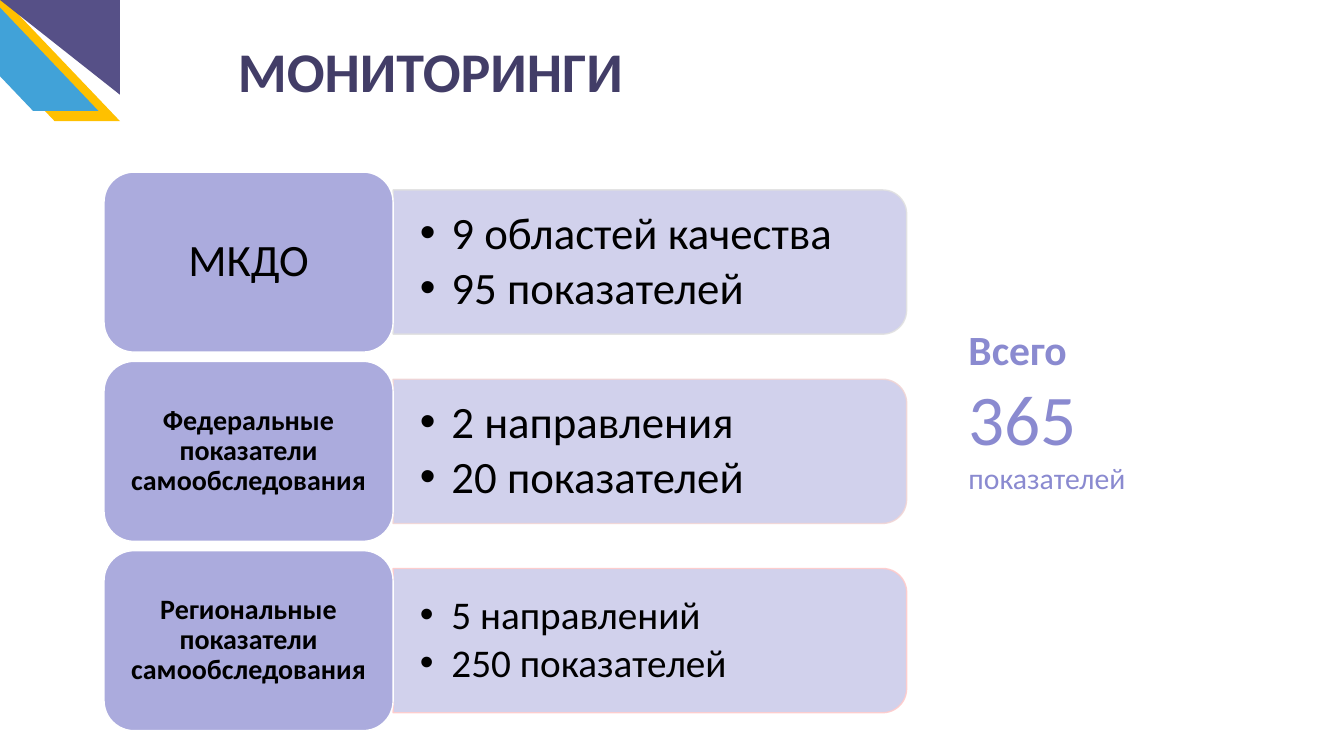
"""Build the monitoring summary slide."""
from lxml import etree
from pptx import Presentation
from pptx.dml.color import RGBColor
from pptx.enum import shapes, text
from pptx.oxml import ns
from pptx.util import Pt

YELLOW = RGBColor(0xFF, 0xC0, 0x00)
BLUE = RGBColor(0x41, 0xA2, 0xD8)
VIOLET = RGBColor(0x56, 0x50, 0x87)
TITLE = RGBColor(0x42, 0x3D, 0x67)
LABEL = RGBColor(0xAB, 0xAB, 0xDD)
PANEL = RGBColor(0xCD, 0xCD, 0xEB)
TOTAL = RGBColor(0x8A, 0x8A, 0xD0)
WHITE = RGBColor(0xFF, 0xFF, 0xFF)
BLACK = RGBColor(0x00, 0x00, 0x00)
MSO = shapes.MSO_SHAPE


def add_shape(kind, x, y, w, h, fill, line=None):
    sp = s.shapes.add_shape(kind, Pt(x), Pt(y), Pt(w), Pt(h))
    sp.shadow.inherit = False
    sp.fill.solid()
    sp.fill.fore_color.rgb = fill
    if line is None:
        sp.line.fill.background()
    else:
        sp.line.color.rgb = line
        sp.line.width = Pt(1)
    return sp


def add_run(p, words, size, color, bold=False):
    r = p.add_run()
    r.text = words
    r.font.name = "Calibri"
    r.font.size = Pt(size)
    r.font.bold = bold
    r.font.color.rgb = color


prs = Presentation()
prs.slide_width, prs.slide_height = Pt(960), Pt(540)
s = prs.slides.add_slide(prs.slide_layouts[6])

for x, y, color in [(-46, -2.7, YELLOW), (-61.4, -10, BLUE)]:
    sp = add_shape(MSO.PARALLELOGRAM, x, y, 131.8, 89.3, color)
    sp.adjustments[0] = 0.953
    sp.element.spPr.xfrm.set("flipH", "1")
sp = add_shape(MSO.RIGHT_TRIANGLE, 0, 0, 85.7, 67.7, VIOLET)
sp.element.spPr.xfrm.set("flipH", "1")
sp.element.spPr.xfrm.set("flipV", "1")

tf = s.shapes.add_textbox(Pt(170), Pt(22.3), Pt(573), Pt(55.4)).text_frame
tf.word_wrap = True
tf.margin_left = 0
add_run(tf.paragraphs[0], "МОНИТОРИНГИ", 40, TITLE, True)

rows = [
    ("МКДО", 32, False, 9.4, ["9 областей качества", "95 показателей"], 32,
     RGBColor(0xE1, 0xE1, 0xE1)),
    ("Федеральные показатели самообследования", 20, True, 5.8,
     ["2 направления", "20 показателей"], 32, RGBColor(0xF1, 0xD5, 0xD5)),
    ("Региональные показатели самообследования", 20, True, 5.8,
     ["5 направлений", "250 показателей"], 28, RGBColor(0xFF, 0xCB, 0xCB)),
]
left, top, label_w, label_h, pitch = 74.3, 122.9, 206.5, 128.6, 135.2
panel_w, panel_h = 366.8, 103
panel_x = left + label_w
for i, (label, label_size, bold, inset, items, item_size, edge) in enumerate(rows):
    y = top + i * pitch
    mid = y + label_h / 2

    sp = add_shape(MSO.ROUND_2_SAME_RECTANGLE, panel_x + (panel_w - panel_h) / 2,
                   mid - panel_w / 2, panel_h, panel_w, PANEL, edge)
    sp.rotation = 90
    for color in sp.element.spPr.iter(ns.qn("a:srgbClr")):
        etree.SubElement(color, ns.qn("a:alpha"), val="90000")

    tf = s.shapes.add_textbox(Pt(panel_x), Pt(mid - 46.5), Pt(362), Pt(93)).text_frame
    tf.word_wrap = True
    tf.vertical_anchor = text.MSO_ANCHOR.MIDDLE
    tf.margin_left = tf.margin_right = Pt(19.2)
    tf.margin_top = tf.margin_bottom = Pt(9.6)
    for j, item in enumerate(items):
        p = tf.add_paragraph() if j else tf.paragraphs[0]
        pPr = p._p.get_or_add_pPr()
        pPr.set("marL", str(Pt(22.5)))
        pPr.set("indent", str(-Pt(22.5)))
        etree.SubElement(pPr, ns.qn("a:buFont"), typeface="Arial")
        etree.SubElement(pPr, ns.qn("a:buChar"), char="•")
        p.line_spacing = 0.9
        p.space_after = Pt(item_size * 0.15)
        add_run(p, item, item_size, BLACK)

    sp = add_shape(MSO.ROUNDED_RECTANGLE, left, y, label_w, label_h, LABEL, WHITE)
    tf = sp.text_frame
    tf.word_wrap = True
    tf.vertical_anchor = text.MSO_ANCHOR.MIDDLE
    tf.margin_left = tf.margin_right = Pt(inset + 6.3)
    p = tf.paragraphs[0]
    p.alignment = text.PP_ALIGN.CENTER
    p.line_spacing = 0.9
    add_run(p, label, label_size, BLACK, bold)

tf = s.shapes.add_textbox(Pt(684.7), Pt(228.2), Pt(132.5), Pt(163.4)).text_frame
tf.word_wrap = False
total = [("Всего", 29.7, True), ("365", 50.9, False), ("показателей", 21.2, False)]
for i, (words, size, bold) in enumerate(total):
    p = tf.add_paragraph() if i else tf.paragraphs[0]
    add_run(p, words, size, TOTAL, bold)

prs.save("out.pptx")
